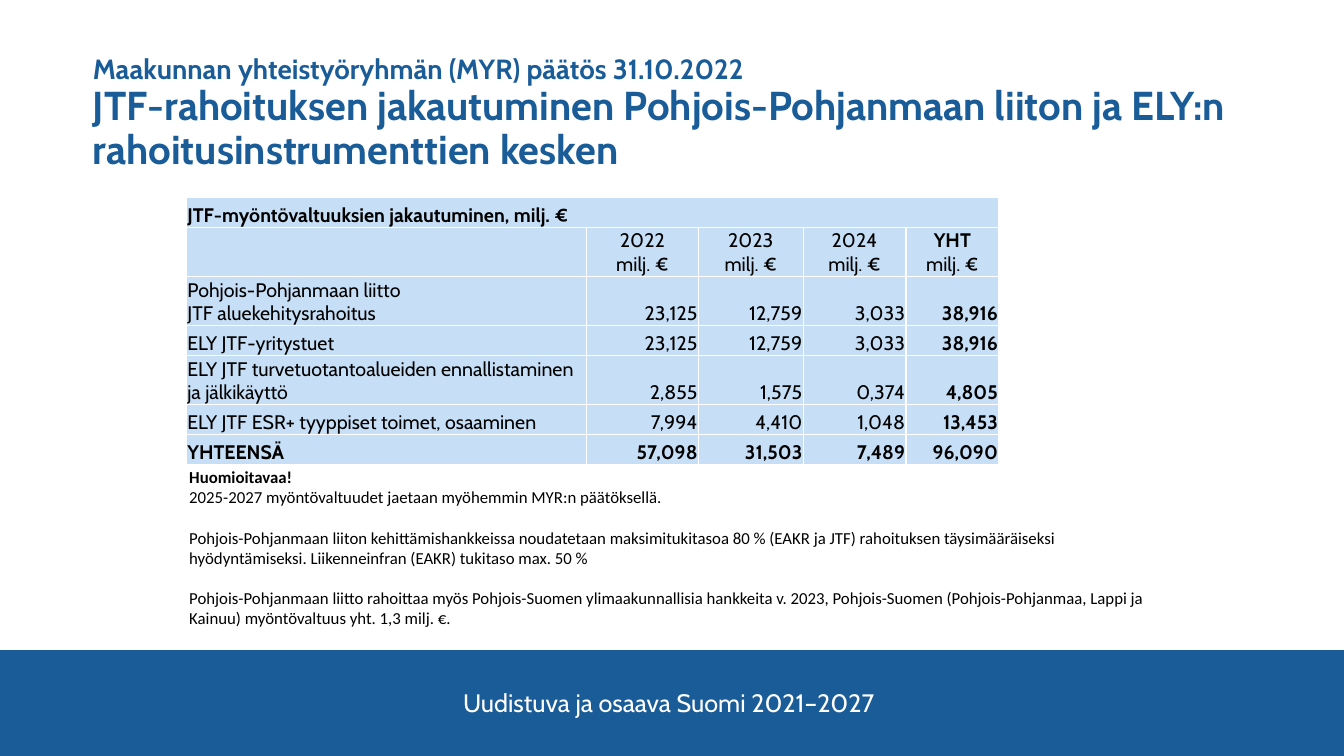
"""Build a slide on how JTF funding is divided between regional funding instruments."""
from dataclasses import dataclass

from lxml import etree
from pptx import Presentation
from pptx.dml.color import RGBColor
from pptx.enum.shapes import MSO_SHAPE
from pptx.enum.text import MSO_ANCHOR, PP_ALIGN
from pptx.oxml.ns import qn
from pptx.util import Cm, Pt

LEFT, CENTER, RIGHT = PP_ALIGN.LEFT, PP_ALIGN.CENTER, PP_ALIGN.RIGHT
TOP, BOTTOM = MSO_ANCHOR.TOP, MSO_ANCHOR.BOTTOM
RECTANGLE = MSO_SHAPE.RECTANGLE

KICKER = "Maakunnan yhteistyöryhmän (MYR) päätös 31.10.2022"
TITLE = "JTF-rahoituksen jakautuminen Pohjois-Pohjanmaan liiton ja ELY:n rahoitusinstrumenttien kesken"
FOOTER = "Uudistuva ja osaava Suomi 2021–2027"
TABLE_TITLE = "JTF-myöntövaltuuksien jakautuminen, milj. €"
UNIT = "milj. €"
YEARS = ["2022", "2023", "2024", "YHT"]
FUNDING = [
    (["Pohjois-Pohjanmaan liitto", "JTF aluekehitysrahoitus"], "23,125", "12,759", "3,033", "38,916"),
    (["ELY JTF-yritystuet"], "23,125", "12,759", "3,033", "38,916"),
    (["ELY JTF turvetuotantoalueiden ennallistaminen ja jälkikäyttö"], "2,855", "1,575", "0,374", "4,805"),
    (["ELY JTF ESR+ tyyppiset toimet, osaaminen"], "7,994", "4,410", "1,048", "13,453"),
    (["YHTEENSÄ"], "57,098", "31,503", "7,489", "96,090"),
]
NOTES = [
    ("Huomioitavaa!", True, 0),
    ("2025-2027 myöntövaltuudet jaetaan myöhemmin MYR:n päätöksellä.", False, 0),
    ("Pohjois-Pohjanmaan liiton kehittämishankkeissa noudatetaan maksimitukitasoa 80 % (EAKR ja JTF) "
     "rahoituksen täysimääräiseksi hyödyntämiseksi. Liikenneinfran (EAKR) tukitaso max. 50 %", False, 14.6),
    ("Pohjois-Pohjanmaan liitto rahoittaa myös Pohjois-Suomen ylimaakunnallisia hankkeita v. 2023, "
     "Pohjois-Suomen (Pohjois-Pohjanmaa, Lappi ja Kainuu) myöntövaltuus yht. 1,3 milj. €.", False, 14.6),
]
COLUMN_WIDTHS = [10.08, 2.82, 2.64, 2.59, 2.34]
ROW_HEIGHTS = [0.75, 1.24, 1.24, 0.75, 1.24, 0.75, 0.75]


@dataclass(frozen=True)
class Theme:
    """Colours, fonts and type sizes."""
    blue: str = "195C98"
    pale: str = "C6DFF6"
    white: str = "FFFFFF"
    black: str = "000000"
    display: str = "Cabin"
    body: str = "Calibri"
    kicker: float = 19.8
    title: float = 28.8
    footer: float = 18
    table: float = 14
    note: float = 12


THEME = Theme()


def add_span(para, text, size, color, bold=False, font=THEME.display):
    span = para.add_run()
    span.text = text
    span.font.name = font
    span.font.size = Pt(size)
    span.font.bold = bold
    span.font.color.rgb = RGBColor.from_string(color)


def add_box(page, left, top, width, height, anchor=TOP):
    frame = page.shapes.add_textbox(Cm(left), Cm(top), Cm(width), Cm(height)).text_frame
    frame.word_wrap = True
    frame.vertical_anchor = anchor
    return frame


def next_para(frame, index):
    return frame.add_paragraph() if index else frame.paragraphs[0]


def add_borders(cell):
    properties = cell._tc.get_or_add_tcPr()
    for position, side in enumerate(("lnL", "lnR", "lnT", "lnB")):
        line = etree.Element(qn(f"a:{side}"), w=str(Pt(1)))
        fill = etree.SubElement(line, qn("a:solidFill"))
        etree.SubElement(fill, qn("a:srgbClr"), val=THEME.white)
        properties.insert(position, line)


def fill_cell(cell, lines, align):
    cell.fill.solid()
    cell.fill.fore_color.rgb = RGBColor.from_string(THEME.pale)
    cell.vertical_anchor = BOTTOM
    cell.margin_left = cell.margin_right = cell.margin_top = Cm(0.02)
    cell.margin_bottom = 0
    add_borders(cell)
    for index, (text, bold) in enumerate(lines):
        para = next_para(cell.text_frame, index)
        para.alignment = align
        add_span(para, text, THEME.table, THEME.black, bold)


def table_rows():
    yield [[(TABLE_TITLE, True)]] + [[] for _ in YEARS]
    yield [[]] + [[(year, year == YEARS[-1]), (UNIT, False)] for year in YEARS]
    for labels, *amounts in FUNDING:
        total = labels == FUNDING[-1][0]
        last = len(amounts) - 1
        yield [[(label, total) for label in labels]] + [
            [(amount, total or index == last)] for index, amount in enumerate(amounts)]


def add_funding_table(page):
    table = page.shapes.add_table(
        len(ROW_HEIGHTS), len(COLUMN_WIDTHS), Cm(4.7), Cm(4.98),
        Cm(sum(COLUMN_WIDTHS)), Cm(sum(ROW_HEIGHTS))).table
    table.first_row = table.horz_banding = False
    for column, width in zip(table.columns, COLUMN_WIDTHS):
        column.width = Cm(width)
    for row, height in zip(table.rows, ROW_HEIGHTS):
        row.height = Cm(height)
    for r, row in enumerate(table_rows()):
        for c, lines in enumerate(row):
            align = LEFT if c == 0 else CENTER if r == 1 else RIGHT
            fill_cell(table.cell(r, c), lines, align)
    table.cell(0, 0).merge(table.cell(0, len(COLUMN_WIDTHS) - 1))


def add_footer(page, deck):
    top = Cm(16.38)
    band = page.shapes.add_shape(RECTANGLE, 0, top, deck.slide_width, deck.slide_height - top)
    band.shadow.inherit = False
    band.fill.solid()
    band.fill.fore_color.rgb = RGBColor.from_string(THEME.blue)
    band.line.fill.background()
    para = add_box(page, 7.57, 17.2, 18.57, 1.02).paragraphs[0]
    para.alignment = CENTER
    add_span(para, FOOTER, THEME.footer, THEME.white)


def add_title(page):
    frame = add_box(page, 2.34, 1.24, 30.3, 3.12, BOTTOM)
    frame.margin_left = frame.margin_right = frame.margin_top = frame.margin_bottom = 0
    para = frame.paragraphs[0]
    para.line_spacing = 0.9
    add_span(para, KICKER, THEME.kicker, THEME.blue, True)
    para.add_line_break()
    add_span(para, TITLE, THEME.title, THEME.blue, True)


def add_notes(page):
    frame = add_box(page, 4.52, 11.63, 25.17, 4.37)
    for index, (text, bold, gap) in enumerate(NOTES):
        para = next_para(frame, index)
        if gap:
            para.space_before = Pt(gap)
        add_span(para, text, THEME.note, THEME.black, bold, THEME.body)


def main():
    deck = Presentation()
    deck.slide_width, deck.slide_height = Cm(33.87), Cm(19.05)
    page = deck.slides.add_slide(deck.slide_layouts[6])
    add_footer(page, deck)
    add_title(page)
    add_funding_table(page)
    add_notes(page)
    deck.save("out.pptx")


if __name__ == "__main__":
    main()
